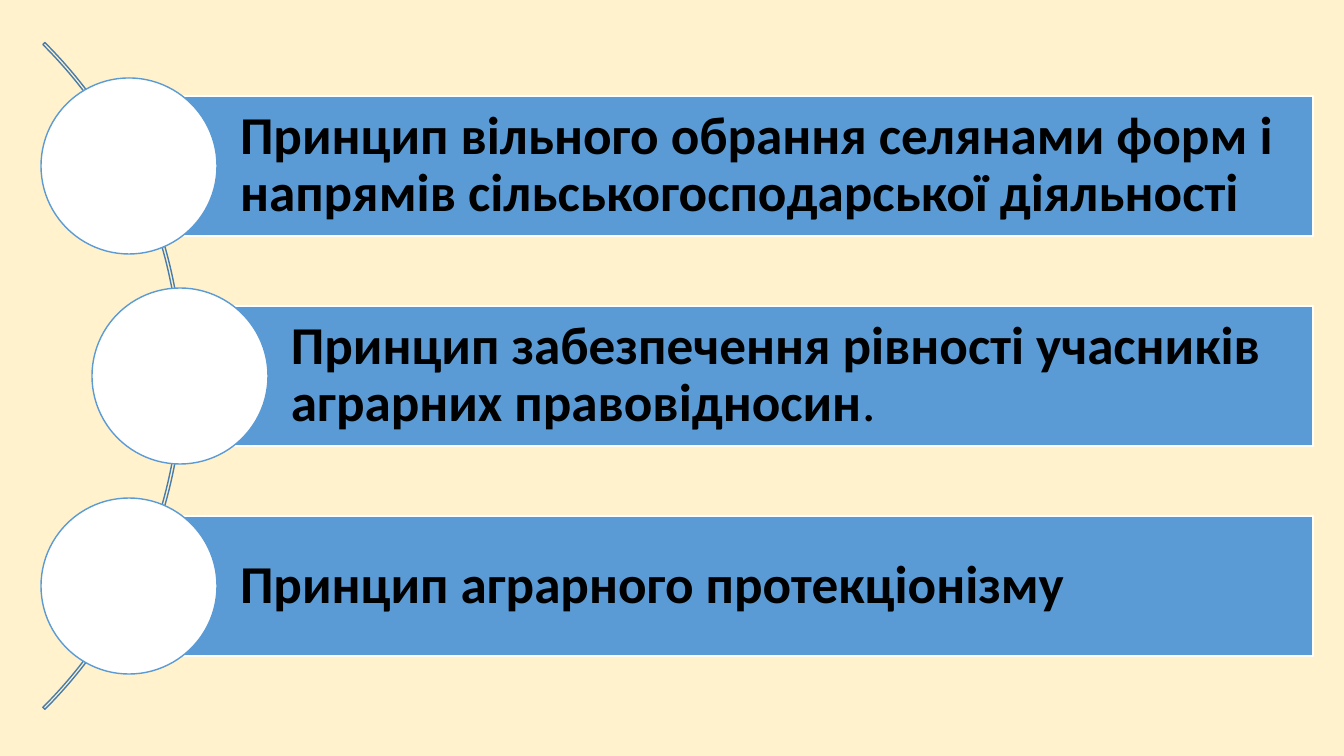
"""Build a slide listing three principles of agrarian law along an arc."""
from pptx import Presentation
from pptx.dml.color import RGBColor
from pptx.enum.shapes import MSO_SHAPE as Shape
from pptx.enum.text import MSO_ANCHOR as Anchor, PP_ALIGN as Align
from pptx.util import Pt

PRINCIPLES = [
    (129, [("Принцип вільного обрання селянами форм і напрямів "
            "сільськогосподарської діяльності", True)]),
    (180, [("Принцип забезпечення рівності учасників аграрних правовідносин", True),
           (".", False)]),
    (129, [("Принцип аграрного протекціонізму", True)]),
]
COLORS = {"background": "FFF2CC", "bar": "5B9BD5", "white": "FFFFFF",
          "arc": "497CAB", "text": "000000"}
SLIDE_WIDTH, SLIDE_HEIGHT = 1344, 756
MIDDLE_Y, ROW_STEP = 376, 210
BAR_RIGHT, BAR_HEIGHT, CIRCLE_SIZE = 1313, 140, 176
ARC_LEFT, ARC_SIZE = -760, 943
TEXT_INDENT, TEXT_MARGIN = 111, 11


def px(length):
    return round(length * 914400 / 100.8)


def color(name):
    return RGBColor.from_string(COLORS[name])


def add_figure(slide, kind, left, center_y, width, height, line, fill=None):
    shape = slide.shapes.add_shape(
        kind, px(left), px(center_y - height / 2), px(width), px(height))
    shape.shadow.inherit = False
    if fill:
        shape.fill.solid()
        shape.fill.fore_color.rgb = color(fill)
    else:
        shape.fill.background()
    shape.line.color.rgb = color(line)
    shape.line.width = Pt(1)
    return shape


def write_text(shape, runs):
    frame = shape.text_frame
    frame.word_wrap = True
    frame.vertical_anchor = Anchor.MIDDLE
    frame.margin_left = px(TEXT_INDENT)
    frame.margin_top = frame.margin_right = frame.margin_bottom = px(TEXT_MARGIN)
    paragraph = frame.paragraphs[0]
    paragraph.alignment = Align.LEFT
    paragraph.line_spacing = 0.9
    for text, bold in runs:
        run = paragraph.add_run()
        run.text = text
        run.font.name = "Calibri"
        run.font.size = Pt(38)
        run.font.bold = bold
        run.font.color.rgb = color("text")


def main():
    presentation = Presentation()
    presentation.slide_width = px(SLIDE_WIDTH)
    presentation.slide_height = px(SLIDE_HEIGHT)
    slide = presentation.slides.add_slide(presentation.slide_layouts[6])
    slide.background.fill.solid()
    slide.background.fill.fore_color.rgb = color("background")

    arc = add_figure(slide, Shape.BLOCK_ARC, ARC_LEFT, MIDDLE_Y, ARC_SIZE, ARC_SIZE, "arc")
    for index, value in enumerate((189, 27, 0.003)):
        arc.adjustments[index] = value

    for row, (left, runs) in enumerate(PRINCIPLES):
        center_y = MIDDLE_Y + (row - 1) * ROW_STEP
        bar = add_figure(slide, Shape.RECTANGLE, left, center_y,
                         BAR_RIGHT - left, BAR_HEIGHT, "white", "bar")
        write_text(bar, runs)
        add_figure(slide, Shape.OVAL, left - CIRCLE_SIZE / 2, center_y,
                   CIRCLE_SIZE, CIRCLE_SIZE, "bar", "white")

    presentation.save("out.pptx")


if __name__ == "__main__":
    main()
